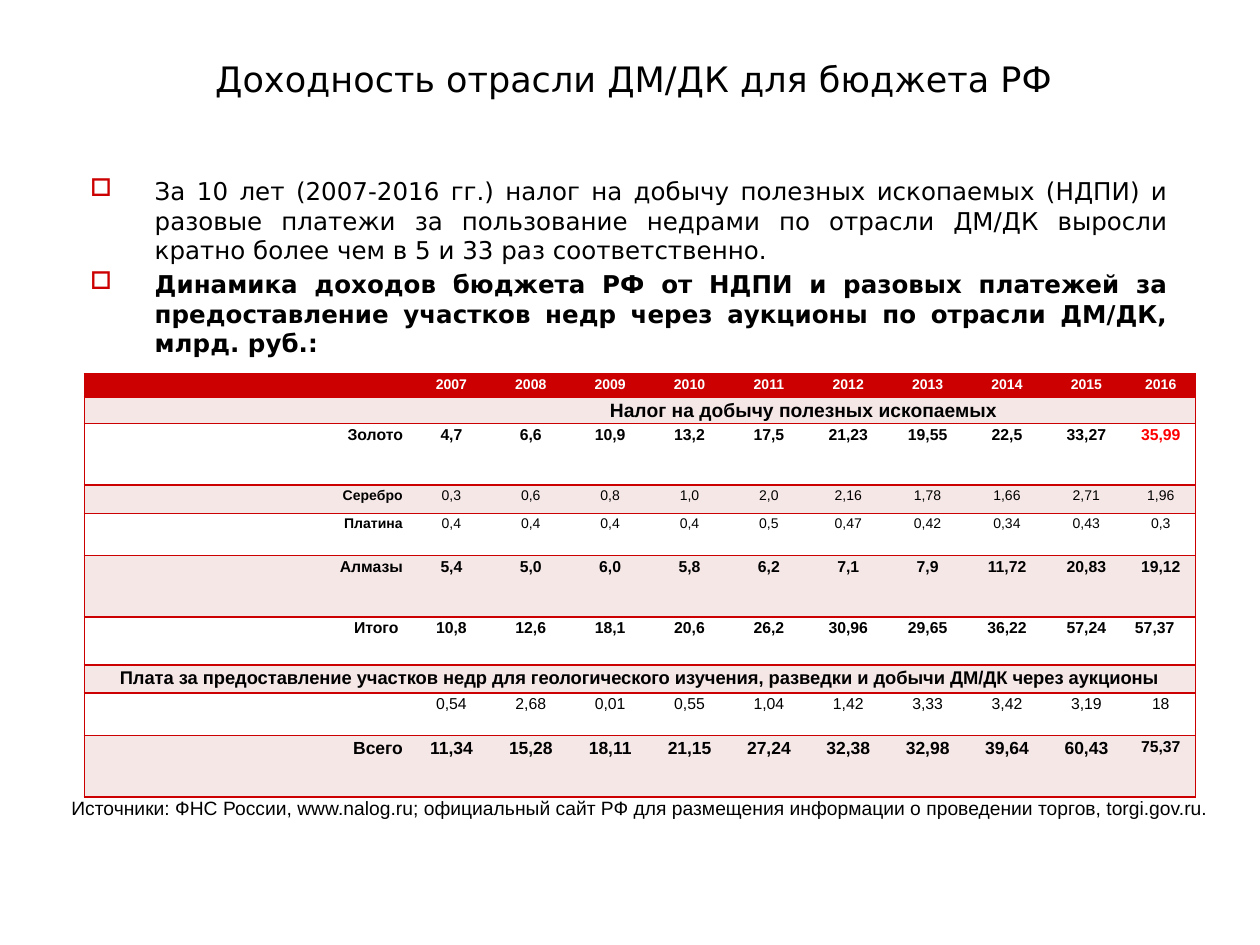
from lxml.etree import SubElement as Sub
from pptx import Presentation
from pptx.dml.color import RGBColor
from pptx.enum.text import MSO_ANCHOR as Anchor, PP_ALIGN as Align
from pptx.oxml.ns import qn
from pptx.util import Cm, Pt

RED = RGBColor(0xCC, 0x00, 0x00)
HOT = RGBColor(0xFF, 0x00, 0x00)
PINK = RGBColor(0xF6, 0xE7, 0xE7)
WHITE = RGBColor(0xFF, 0xFF, 0xFF)
BLACK = RGBColor(0x00, 0x00, 0x00)

# Height in cm, label, values, text size, bold
ROWS = [
    (0.46, "", "2007 2008 2009 2010 2011 2012 2013 2014 2015 2016", 8, True),
    (0.53, "", ["Налог на добычу полезных ископаемых"], 11, True),
    (1.24, "Золото", "4,7 6,6 10,9 13,2 17,5 21,23 19,55 22,5 33,27 35,99", 9, True),
    (0.58, "Серебро", "0,3 0,6 0,8 1,0 2,0 2,16 1,78 1,66 2,71 1,96", 8, False),
    (0.84, "Платина", "0,4 0,4 0,4 0,4 0,5 0,47 0,42 0,34 0,43 0,3", 8, False),
    (1.24, "Алмазы", "5,4 5,0 6,0 5,8 6,2 7,1 7,9 11,72 20,83 19,12", 9, True),
    (0.97, "Итого ", "10,8 12,6 18,1 20,6 26,2 30,96 29,65 36,22 57,24 57,37", 9, True),
    (0.56, "Плата за предоставление участков недр для геологического изучения, "
           "разведки и добычи ДМ/ДК через аукционы", [], 10.5, True),
    (0.86, "", "0,54 2,68 0,01 0,55 1,04 1,42 3,33 3,42 3,19 18", 9, False),
    (1.24, "Всего", "11,34 15,28 18,11 21,15 27,24 32,38 32,98 39,64 60,43 75,37", 10, True),
]
COLS = [6.6] + [1.6] * 9 + [1.4]
LAST = len(COLS) - 1
TAX, GOLD, TOTAL, FEE, ALL = 1, 2, 6, 7, 9

# Cells that differ from the rest of their row
SPECIAL = {
    (GOLD, LAST): {"color": HOT},
    (TOTAL, LAST): {"align": Align.LEFT},
    (FEE, 0): {"align": Align.CENTER},
    (ALL, LAST): {"size": 9},
}


class Deck:
    wide, sans = "DejaVu Sans", "Arial"

    def __init__(self):
        self.prs = Presentation()
        self.prs.slide_width, self.prs.slide_height = Cm(25.4), Cm(19.05)
        self.slide = self.prs.slides.add_slide(self.prs.slide_layouts[6])

    def put(self, par, text, size, font, bold=False, color=BLACK, align=Align.LEFT):
        par.alignment = align
        if not text:
            Sub(par._p, qn("a:endParaRPr"), sz=str(int(size * 100)))
            return
        run = par.add_run()
        run.text = text
        style = {"size": Pt(size), "name": font, "bold": bold}
        for key, val in style.items():
            setattr(run.font, key, val)
        run.font.color.rgb = color

    def text(self, box, text, size, font, anchor=Anchor.TOP):
        frame = self.frame(box, anchor)
        self.put(frame.paragraphs[0], text, size, font)

    def frame(self, box, anchor=Anchor.TOP):
        frame = self.slide.shapes.add_textbox(*map(Cm, box)).text_frame
        frame.word_wrap = True
        frame.vertical_anchor = anchor
        return frame

    def bullets(self, box, items, size):
        frame = self.frame(box)
        for i, (text, bold) in enumerate(items):
            par = frame.add_paragraph() if i else frame.paragraphs[0]
            if i:
                par.space_before = Pt(size * 0.2)
            props = par._p.get_or_add_pPr()
            props.set("marL", str(Cm(1.3)))
            props.set("indent", str(-Cm(1.3)))
            tint = Sub(props, qn("a:buClr"))
            Sub(tint, qn("a:srgbClr"), val=str(RED))
            Sub(props, qn("a:buChar"), char="□")
            self.put(par, text, size, self.wide, bold, align=Align.JUSTIFY)

    def border(self, cell, sides):
        props = cell._tc.get_or_add_tcPr()
        for side in "LRTB":
            line = Sub(props, qn("a:ln" + side), w=str(Pt(1)))
            if side in sides:
                fill = Sub(line, qn("a:solidFill"))
                Sub(fill, qn("a:srgbClr"), val=str(RED))
            else:
                Sub(line, qn("a:noFill"))

    def cell(self, cell, text, fill, sides, **style):
        self.border(cell, sides)
        cell.fill.solid()
        cell.fill.fore_color.rgb = fill
        pads = {"margin_left": Cm(0.18), "margin_right": Cm(0.18),
                "margin_top": 0, "margin_bottom": 0}
        for key, val in pads.items():
            setattr(cell, key, val)
        par = cell.text_frame.paragraphs[0]
        par.line_spacing = 1.15
        self.put(par, text, font=self.sans, **style)

    def table(self, left, top):
        size = (sum(COLS), sum(row[0] for row in ROWS))
        grid = self.slide.shapes.add_table(
            len(ROWS), len(COLS), *map(Cm, (left, top, *size))).table
        grid.first_row = grid.horz_banding = False
        for col, width in zip(grid.columns, COLS):
            col.width = Cm(width)
        # Section headings span the columns
        for r, c in ((TAX, 1), (FEE, 0)):
            grid.cell(r, c).merge(grid.cell(r, LAST))
        for r, (height, label, vals, pt, bold) in enumerate(ROWS):
            grid.rows[r].height = Cm(height)
            words = [label] + (vals.split() if isinstance(vals, str) else vals)
            words += [""] * (len(COLS) - len(words))
            fill = RED if r == 0 else PINK if r % 2 else WHITE
            for c, word in enumerate(words):
                cell = grid.cell(r, c)
                sides = "TB" + ("L" if c == 0 else "")
                if c == LAST or c + cell.span_width > LAST:
                    sides += "R"
                style = {"size": pt, "bold": bold or c == 0,
                         "color": BLACK if r else WHITE,
                         "align": Align.CENTER if c else Align.RIGHT}
                style.update(SPECIAL.get((r, c), {}))
                self.cell(cell, word, fill, sides, **style)


def main():
    deck = Deck()
    # Title
    deck.text((4.09, 0.74, 17.7, 1.4), "Доходность отрасли ДМ/ДК для бюджета РФ",
              20, deck.wide, Anchor.BOTTOM)
    # Key points
    deck.bullets((1.57, 3.43, 22.23, 13.28), [
        ("За 10 лет (2007-2016 гг.) налог на добычу полезных ископаемых (НДПИ) и "
         "разовые платежи за пользование недрами по отрасли ДМ/ДК выросли кратно "
         "более чем в 5 и 33 раз соответственно.", False),
        ("Динамика доходов бюджета РФ от НДПИ и разовых платежей за предоставление "
         "участков недр через аукционы по отрасли ДМ/ДК, млрд. руб.:", True),
    ], 14)
    # Revenue table
    deck.table(1.7, 7.54)
    # Sources
    deck.text((1.19, 15.93, 24.2, 0.74),
              "Источники: ФНС России, www.nalog.ru; официальный сайт РФ для размещения "
              "информации о проведении торгов, torgi.gov.ru.", 11, deck.sans)
    deck.prs.save("out.pptx")


if __name__ == "__main__":
    main()
